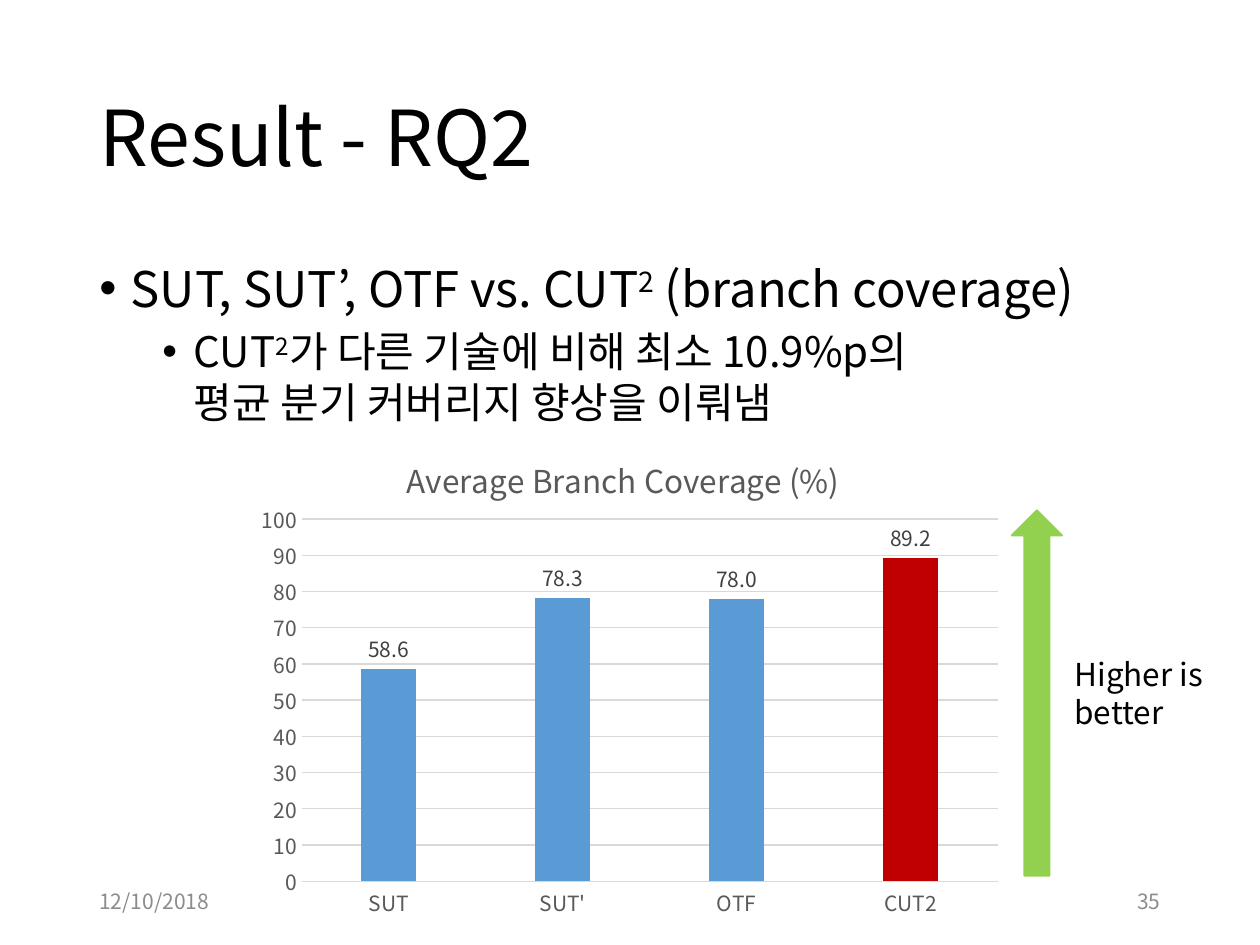
from lxml.etree import SubElement
from pptx import Presentation
from pptx.chart.data import CategoryChartData
from pptx.dml.color import RGBColor
from pptx.enum.chart import XL_CHART_TYPE, XL_LABEL_POSITION, XL_TICK_MARK
from pptx.enum.shapes import MSO_SHAPE
from pptx.enum.text import MSO_ANCHOR, PP_ALIGN
from pptx.oxml import parse_xml
from pptx.oxml.ns import nsdecls, qn
from pptx.util import Inches, Pt

FONT = "Noto Sans CJK KR"
HUES = {"ink": "000000", "foot": "8C8C8C", "axis": "595959", "label": "404040",
        "grid": "D9D9D9", "bar": "5B9BD5", "best": "C00000", "arrow": "92D050"}


def hue(name):
    """Return a named colour."""
    return RGBColor.from_string(HUES[name])


def style(font, size, name):
    """Set size, face and colour of a font."""
    font.size, font.name = Pt(size), FONT
    font.color.rgb = hue(name)


def add_run(para, text, size, name="ink", raised=False):
    """Add a styled run, raised if it is a superscript."""
    run = para.add_run()
    run.text = text
    style(run.font, size, name)
    props = run.font._element
    SubElement(props, qn("a:ea"), typeface=FONT)
    if raised:
        props.set("baseline", "30000")


def add_box(slide, box, anchor=MSO_ANCHOR.TOP, wrap=True):
    """Add an empty text box and return its frame."""
    frame = slide.shapes.add_textbox(*map(Inches, box)).text_frame
    frame.word_wrap, frame.vertical_anchor = wrap, anchor
    return frame


def add_line(slide, box, text, size, name="ink", align=PP_ALIGN.LEFT):
    """Add one line of text centred vertically in its box."""
    para = add_box(slide, box, MSO_ANCHOR.MIDDLE).paragraphs[0]
    para.alignment = align
    add_run(para, text, size, name)
    return para


def set_bullet(para, level, left, gap):
    """Give a paragraph a hanging bullet and space before it."""
    para.level, para.space_before = level, Pt(gap)
    props = para._p.get_or_add_pPr()
    props.set("marL", str(Inches(left)))
    props.set("indent", str(Inches(-0.25)))
    SubElement(props, qn("a:buFont"), typeface="Arial")
    SubElement(props, qn("a:buChar"), char="•")


def add_body(slide, box):
    """Add the two bullet levels of the finding."""
    frame = add_box(slide, box)
    head, sub = frame.paragraphs[0], frame.add_paragraph()
    set_bullet(head, 0, 0.25, 10)
    add_run(head, "SUT, SUT’, OTF vs. CUT", 28)
    add_run(head, "2", 28, raised=True)
    add_run(head, " (branch coverage)", 28)
    set_bullet(sub, 1, 0.75, 5)
    add_run(sub, "CUT", 24)
    add_run(sub, "2", 24, raised=True)
    add_run(sub, "가 다른 기술에 비해 최소 10.9%p의", 24)
    sub.add_line_break()
    add_run(sub, "평균 분기 커버리지 향상을 이뤄냄", 24)


def set_place(part, after, target="", **spots):
    """Place a chart part by fractions of the chart area."""
    for old in part.findall(qn("c:layout")):
        part.remove(old)
    modes = "".join(f'<c:{key}Mode val="edge"/>' for key in "xy")
    sizes = "".join(f'<c:{key} val="{val}"/>' for key, val in spots.items())
    node = parse_xml(f'<c:layout {nsdecls("c")}><c:manualLayout>{target}{modes}'
                     f'{sizes}</c:manualLayout></c:layout>')
    if after is None:
        part.insert(0, node)
    else:
        after.addnext(node)


def set_axes(chart):
    """Style both axes and the grid."""
    for axis in (chart.category_axis, chart.value_axis):
        axis.major_tick_mark = axis.minor_tick_mark = XL_TICK_MARK.NONE
        style(axis.tick_labels.font, 12, "axis")
    vals = chart.value_axis
    vals.minimum_scale, vals.maximum_scale, vals.major_unit = 0, 100, 10
    vals.format.line.fill.background()
    for line in (chart.category_axis.format.line, vals.major_gridlines.format.line):
        line.color.rgb, line.width = hue("grid"), Pt(0.75)


def set_bars(plot):
    """Style the bars and labels and mark the best one."""
    plot.gap_width, plot.overlap, plot.vary_by_categories = 219, -27, False
    bars = plot.series[0]
    for fill, name in ((bars.format.fill, "bar"), (bars.points[3].format.fill, "best")):
        fill.solid()
        fill.fore_color.rgb = hue(name)
    labels = bars.data_labels
    labels.show_value, labels.position = True, XL_LABEL_POSITION.OUTSIDE_END
    labels.number_format, labels.number_format_is_linked = "#,##0.0", False
    style(labels.font, 12, "label")


def add_graph(slide, box):
    """Add the column chart of average coverage."""
    data = CategoryChartData()
    data.categories = ["SUT", "SUT'", "OTF", "CUT2"]
    data.add_series("Series 1", (58.6, 78.3, 78, 89.2))
    kind = XL_CHART_TYPE.COLUMN_CLUSTERED
    chart = slide.shapes.add_chart(kind, *map(Inches, box), data).chart
    style(chart.font, 10, "ink")
    chart.has_legend, chart.has_title = False, True
    title = chart.chart_title
    para = title.text_frame.paragraphs[0]
    para.text = "Average Branch Coverage (%)"
    style(para.runs[0].font, 18, "axis")
    para.runs[0].font.bold = False
    set_axes(chart)
    set_bars(chart.plots[0])
    root = title._element
    set_place(root, root.find(qn("c:tx")), x=0.2, y=0.06)
    area = chart._chartSpace.chart.plotArea
    set_place(area, None, '<c:layoutTarget val="inner"/>', x=0.07, y=0.2, w=0.91, h=0.71)


def add_guide(slide, box):
    """Add the upward arrow and the note at its right."""
    left, top, width, height = box
    arrow = slide.shapes.add_shape(MSO_SHAPE.UP_ARROW, *map(Inches, (left, top, 0.4, height)))
    arrow.shadow.inherit = False
    arrow.fill.solid()
    arrow.fill.fore_color.rgb = arrow.line.color.rgb = hue("arrow")
    arrow.line.width = Pt(1)
    frame = add_box(slide, (left + 0.4, top + 1.1, width - 0.4, 0.71), wrap=False)
    frame.text = "Higher is\nbetter"
    for para in frame.paragraphs:
        style(para.runs[0].font, 18, "ink")


def main():
    """Build the slide."""
    deck = Presentation()
    deck.slide_width, deck.slide_height = Inches(10), Inches(7.5)
    slide = deck.slides.add_slide(deck.slide_layouts[6])
    title = add_line(slide, (0.69, 0.4, 8.62, 1.45), "Result - RQ2", 44)
    title.line_spacing = 0.9
    add_body(slide, (0.69, 2, 8.62, 4.76))
    add_line(slide, (0.69, 6.95, 2.25, 0.4), "12/10/2018", 12, "foot")
    add_line(slide, (7.06, 6.95, 2.25, 0.4), "35", 12, "foot", PP_ALIGN.RIGHT)
    add_graph(slide, (1.97, 3.31, 6.07, 4.05))
    add_guide(slide, (8.03, 4.05, 1.63, 2.9))
    deck.save("out.pptx")


if __name__ == "__main__":
    main()
